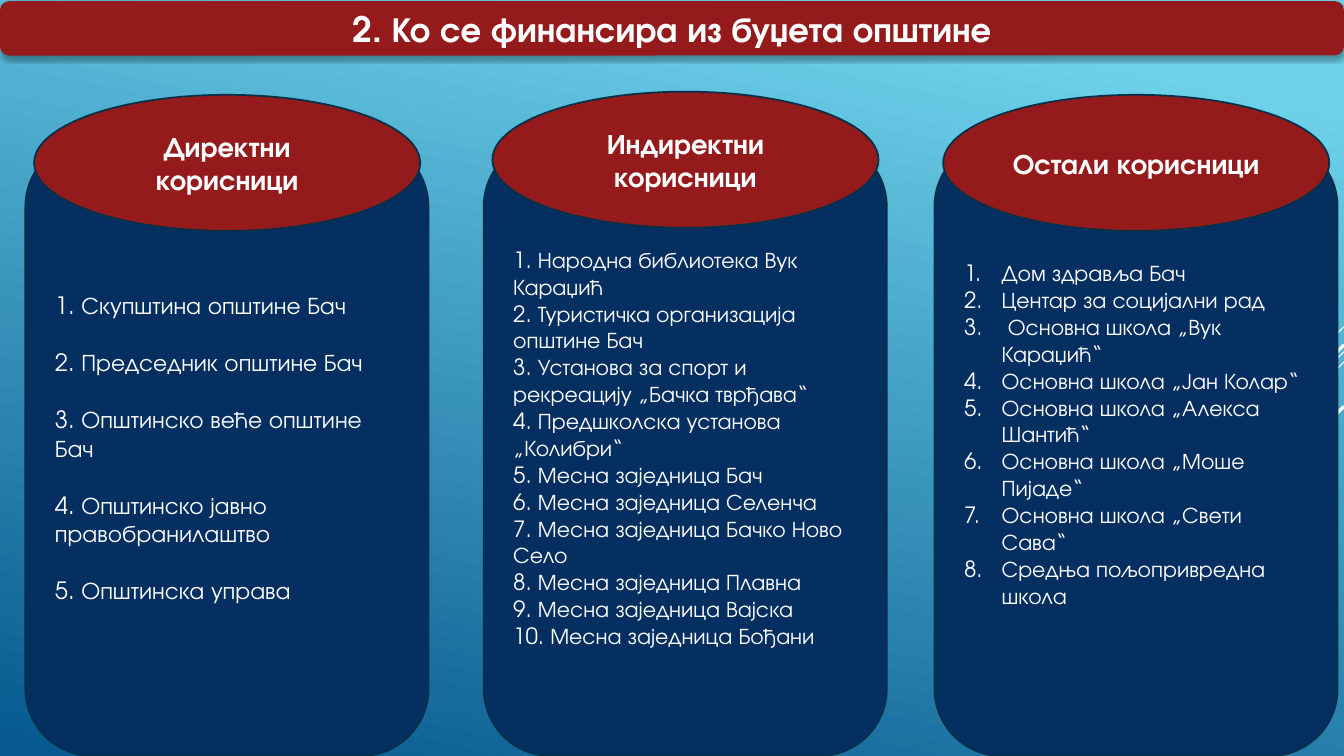
from dataclasses import dataclass

from lxml.etree import SubElement
from pptx import Presentation
from pptx.dml.color import RGBColor
from pptx.enum.shapes import MSO_CONNECTOR, MSO_SHAPE
from pptx.enum.text import MSO_ANCHOR, PP_ALIGN
from pptx.oxml.ns import qn
from pptx.shapes.autoshape import Shape
from pptx.slide import Slide
from pptx.util import Cm, Pt

FONT = "TeX Gyre Adventor"
RED, NAVY, OUTLINE, WHITE = "941A1B", "052F61", "043148", "FFFFFF"
SLIDE_WIDTH, SLIDE_HEIGHT = 33.87, 19.05
COLUMN_TOP, COLUMN_WIDTH, COLUMN_HEIGHT = 3.51, 10.16, 15.54
OVAL_WIDTH, OVAL_HEIGHT, OVAL_OFFSET = 9.73, 3.43, 0.22
LIST_INDENT = 0.95


@dataclass
class Stripe:
    """A diagonal that runs down and left from the right slide edge."""
    top: float
    reach: float
    weight: float


@dataclass
class Column:
    left: float
    oval_top: float
    heading: str
    items: list[str]
    size: float = 16
    gap: float = 0
    numbered: bool = False
    bottom_inset: float = 0.13


STRIPES = [
    Stripe(8.23, 2.54, 0.75),
    Stripe(8.86, 8.28, 0.75),
    Stripe(9.12, 5.26, 0.75),
    Stripe(8.69, 4.85, 2.25),
    Stripe(10.24, 3.53, 2.25),
]

COLUMNS = [
    Column(0.64, 2.39, "Директни корисници", [
        "1. Скупштина општине Бач",
        "2. Председник општине Бач",
        "3. Општинско веће општине Бач",
        "4. Општинско јавно правобранилаштво",
        "5. Општинска управа",
    ], size=17, gap=20.4),
    Column(12.19, 2.31, "Индиректни корисници", [
        "1. Народна библиотека Вук Караџић",
        "2. Туристичка организација општине Бач",
        "3. Установа за спорт и рекреацију „Бачка тврђава“",
        "4. Предшколска установа „Колибри“",
        "5. Месна заједница Бач",
        "6. Месна заједница Селенча",
        "7. Месна заједница Бачко Ново Село",
        "8. Месна заједница Плавна",
        "9. Месна заједница Вајска",
        "10. Месна заједница Бођани",
    ]),
    Column(23.55, 2.39, "Остали корисници", [
        "Дом здравља Бач",
        "Центар за социјални рад",
        " Основна школа „Вук Караџић“",
        "Основна школа „Јан Колар“",
        "Основна школа „Алекса Шантић“",
        "Основна школа „Моше Пијаде“",
        "Основна школа „Свети Сава“",
        "Средња пољопривредна школа",
    ], numbered=True, bottom_inset=0.81),
]


def color(value: str) -> RGBColor:
    return RGBColor.from_string(value)


def paint_background(slide: Slide) -> None:
    fill = slide.background.fill
    fill.gradient()
    fill.gradient_angle = 258
    for stop, position, value in zip(fill.gradient_stops, (0.1, 1), ("6ED2EB", "06588E")):
        stop.position = position
        stop.color.rgb = color(value)


def add_stripe(slide: Slide, stripe: Stripe) -> None:
    connector = slide.shapes.add_connector(
        MSO_CONNECTOR.STRAIGHT, Cm(SLIDE_WIDTH), Cm(stripe.top),
        Cm(SLIDE_WIDTH - stripe.reach), Cm(stripe.top + stripe.reach))
    connector.line.color.rgb = color(WHITE)
    connector.line.width = Pt(stripe.weight)
    SubElement(connector._element.spPr, qn("a:effectLst"))


def add_box(slide: Slide, kind: MSO_SHAPE, left: float, top: float, width: float,
            height: float, fill: str, outlined: bool = True) -> Shape:
    shape = slide.shapes.add_shape(kind, Cm(left), Cm(top), Cm(width), Cm(height))
    shape.shadow.inherit = False
    shape.fill.solid()
    shape.fill.fore_color.rgb = color(fill)
    if outlined:
        shape.line.color.rgb = color(OUTLINE)
        shape.line.width = Pt(1.25)
    else:
        shape.line.fill.background()
    return shape


def write(shape: Shape, lines: list[str], size: float, bold: bool = False,
          align: PP_ALIGN = PP_ALIGN.CENTER) -> None:
    text_frame = shape.text_frame
    text_frame.word_wrap = True
    text_frame.vertical_anchor = MSO_ANCHOR.MIDDLE
    text_frame.text = "\n".join(lines)
    for paragraph in text_frame.paragraphs:
        paragraph.alignment = align
        for run in paragraph.runs:
            run.font.name = FONT
            run.font.size = Pt(size)
            run.font.bold = bold
            run.font.color.rgb = color(WHITE)


def add_drop_shadow(shape: Shape) -> None:
    effects = shape._element.spPr.find(qn("a:effectLst"))
    shadow = SubElement(effects, qn("a:outerShdw"), blurRad=str(Pt(3.5)),
                        dist=str(Pt(2.2)), dir="5400000", rotWithShape="0")
    shadow_color = SubElement(shadow, qn("a:srgbClr"), val="000000")
    SubElement(shadow_color, qn("a:alpha"), val="32000")


def add_title(slide: Slide, text: str) -> None:
    title = add_box(slide, MSO_SHAPE.ROUNDED_RECTANGLE, 0, 0.03, SLIDE_WIDTH, 1.37,
                    RED, outlined=False)
    add_drop_shadow(title)
    write(title, [text], 25, bold=True)


def add_column(slide: Slide, column: Column) -> None:
    panel = add_box(slide, MSO_SHAPE.ROUNDED_RECTANGLE, column.left, COLUMN_TOP,
                    COLUMN_WIDTH, COLUMN_HEIGHT, NAVY)
    panel.text_frame.margin_bottom = Cm(column.bottom_inset)
    write(panel, column.items, column.size, align=PP_ALIGN.LEFT)
    paragraphs = panel.text_frame.paragraphs
    if column.gap:
        for paragraph in paragraphs[1:]:
            paragraph.space_before = Pt(column.gap)
    if column.numbered:
        for paragraph in paragraphs:
            properties = paragraph._p.get_or_add_pPr()
            properties.set("marL", str(Cm(LIST_INDENT)))
            properties.set("indent", str(-Cm(LIST_INDENT)))
            SubElement(properties, qn("a:buFont"), typeface="+mj-lt")
            SubElement(properties, qn("a:buAutoNum"), type="arabicPeriod")


def add_heading(slide: Slide, column: Column) -> None:
    oval = add_box(slide, MSO_SHAPE.OVAL, column.left + OVAL_OFFSET, column.oval_top,
                   OVAL_WIDTH, OVAL_HEIGHT, RED)
    write(oval, [column.heading], 20, bold=True)


def main() -> None:
    presentation = Presentation()
    presentation.slide_width = Cm(SLIDE_WIDTH)
    presentation.slide_height = Cm(SLIDE_HEIGHT)
    slide = presentation.slides.add_slide(presentation.slide_layouts[6])

    # Background and diagonal stripes
    paint_background(slide)
    for stripe in STRIPES:
        add_stripe(slide, stripe)

    # Title bar
    add_title(slide, "2. Ко се финансира из буџета општине")

    # Panels with the beneficiaries, then the ovals that overlap them
    for column in COLUMNS:
        add_column(slide, column)
    for column in COLUMNS:
        add_heading(slide, column)

    presentation.save("out.pptx")


if __name__ == "__main__":
    main()
